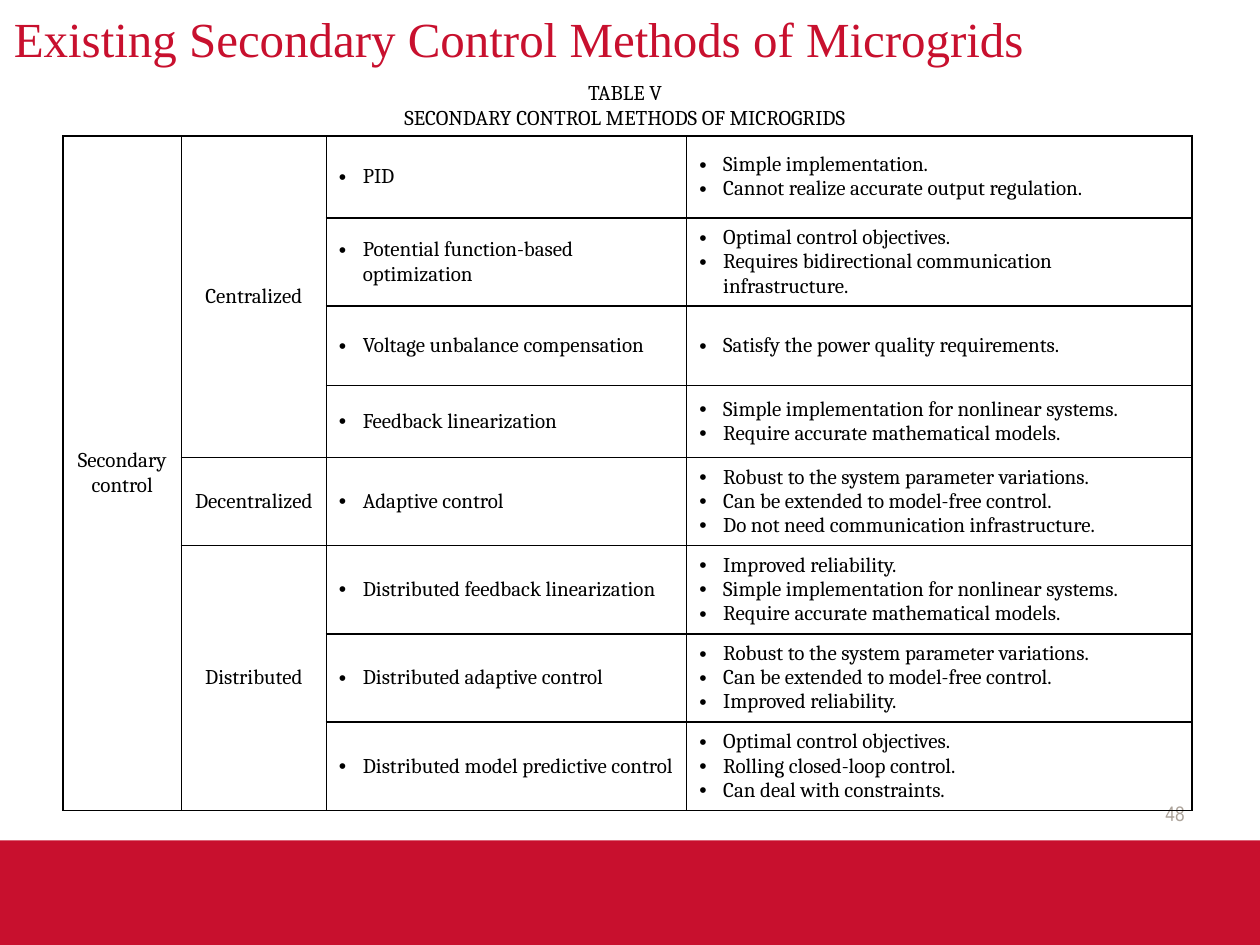
from dataclasses import dataclass
from itertools import accumulate

from lxml.etree import SubElement
from pptx import Presentation
from pptx.dml.color import RGBColor as Rgb
from pptx.enum.shapes import MSO_SHAPE as Shape
from pptx.enum.text import MSO_ANCHOR as Anchor, MSO_AUTO_SIZE as AutoSize, PP_ALIGN as Align
from pptx.oxml.ns import qn
from pptx.util import Inches, Pt

TITLE = "Existing Secondary Control Methods of Microgrids"
CAPTION = ["TABLE V", "SECONDARY CONTROL METHODS OF MICROGRIDS"]
PAGE = "48"
ROOT = "Secondary control"
FAMILIES = [
    ("Centralized", [
        ("PID", ["Simple implementation.", "Cannot realize accurate output regulation."]),
        ("Potential function-based optimization",
         ["Optimal control objectives.", "Requires bidirectional communication infrastructure."]),
        ("Voltage unbalance compensation", ["Satisfy the power quality requirements."]),
        ("Feedback linearization",
         ["Simple implementation for nonlinear systems.", "Require accurate mathematical models."]),
    ]),
    ("Decentralized", [
        ("Adaptive control",
         ["Robust to the system parameter variations.", "Can be extended to model-free control.",
          "Do not need communication infrastructure."]),
    ]),
    ("Distributed", [
        ("Distributed feedback linearization",
         ["Improved reliability.", "Simple implementation for nonlinear systems.",
          "Require accurate mathematical models."]),
        ("Distributed adaptive control",
         ["Robust to the system parameter variations.", "Can be extended to model-free control.",
          "Improved reliability."]),
        ("Distributed model predictive control",
         ["Optimal control objectives.", "Rolling closed-loop control.", "Can deal with constraints."]),
    ]),
]
COLUMNS = [0.94, 1.15, 2.86, 4.01]
ROWS = [0.65, 0.7, 0.63, 0.57] + [0.7] * 4


@dataclass(frozen=True)
class Theme:
    red: str = "C8102E"
    ink: str = "000000"
    paper: str = "FFFFFF"
    muted: str = "ACA39A"
    title_font: str = "Times New Roman"
    body_font: str = "Cambria"
    page_font: str = "Arial Narrow"
    title_size: int = 28
    body_size: int = 12
    indent: float = 0.19
    border: float = 1


THEME = Theme()


def box(left, top, width, height):
    return [Inches(length) for length in (left, top, width, height)]


def add_bullet(paragraph):
    properties = paragraph._p.get_or_add_pPr()
    properties.set("marL", str(Inches(THEME.indent)))
    properties.set("indent", str(-Inches(THEME.indent)))
    SubElement(properties, qn("a:buFont")).set("typeface", "Arial")
    SubElement(properties, qn("a:buChar")).set("char", "•")


def write(frame, lines, align=Align.LEFT, font=THEME.body_font, size=THEME.body_size,
          color=THEME.ink, anchor=Anchor.MIDDLE, bulleted=False):
    frame.word_wrap = True
    frame.vertical_anchor = anchor
    for index, line in enumerate(lines):
        paragraph = frame.add_paragraph() if index else frame.paragraphs[0]
        paragraph.alignment = align
        if bulleted:
            add_bullet(paragraph)
        run = paragraph.add_run()
        run.text = line
        run.font.name, run.font.size = font, Pt(size)
        run.font.color.rgb = Rgb.from_string(color)


def add_panel(slide, bounds, color):
    panel = slide.shapes.add_shape(Shape.RECTANGLE, *box(*bounds))
    panel.shadow.inherit = False
    panel.fill.solid()
    panel.fill.fore_color.rgb = Rgb.from_string(color)
    panel.line.fill.background()
    return panel


def style_cell(cell):
    properties = cell._tc.get_or_add_tcPr()
    for side in ("lnL", "lnR", "lnT", "lnB"):
        line = SubElement(properties, qn(f"a:{side}"), w=str(Pt(THEME.border)))
        SubElement(SubElement(line, qn("a:solidFill")), qn("a:srgbClr"), val=THEME.ink)
    cell.fill.background()


def add_methods_table(slide):
    bounds = box(0.5, 1.08, sum(COLUMNS), sum(ROWS))
    table = slide.shapes.add_table(len(ROWS), len(COLUMNS), *bounds).table
    table.first_row = table.horz_banding = False
    for column, width in zip(table.columns, COLUMNS):
        column.width = Inches(width)
    for row, height in zip(table.rows, ROWS):
        row.height = Inches(height)
    for cell in table.iter_cells():
        style_cell(cell)

    def label(column, first, count, text):
        cell = table.cell(first, column)
        if count > 1:
            cell.merge(table.cell(first + count - 1, column))
        cell.vertical_anchor = Anchor.MIDDLE
        write(cell.text_frame, [text], Align.CENTER)

    label(0, 0, len(ROWS), ROOT)
    starts = accumulate((len(methods) for _, methods in FAMILIES), initial=0)
    for start, (family, methods) in zip(starts, FAMILIES):
        label(1, start, len(methods), family)
        for row, (method, traits) in enumerate(methods, start):
            for column, lines in ((2, [method]), (3, traits)):
                cell = table.cell(row, column)
                cell.vertical_anchor = Anchor.MIDDLE
                write(cell.text_frame, lines, bulleted=True)


def main():
    deck = Presentation()
    deck.slide_width, deck.slide_height = Inches(10), Inches(7.5)
    slide = deck.slides.add_slide(deck.slide_layouts[5])

    add_panel(slide, (0, 6.67, 10, 0.83), THEME.red)

    page = slide.shapes.add_textbox(*box(7.17, 6.25, 2.33, 0.4))
    write(page.text_frame, [PAGE], Align.RIGHT, THEME.page_font, color=THEME.muted)

    title = slide.shapes.title
    title.left, title.top, title.width, title.height = box(0.01, 0.01, 8.5, 0.58)
    title.text_frame.auto_size = AutoSize.NONE
    write(title.text_frame, [TITLE], font=THEME.title_font, size=THEME.title_size, color=THEME.red)

    caption = add_panel(slide, (1.25, 0.58, 7.42, 0.5), THEME.paper)
    write(caption.text_frame, CAPTION, Align.CENTER, anchor=Anchor.TOP)

    add_methods_table(slide)
    deck.save("out.pptx")


if __name__ == "__main__":
    main()
